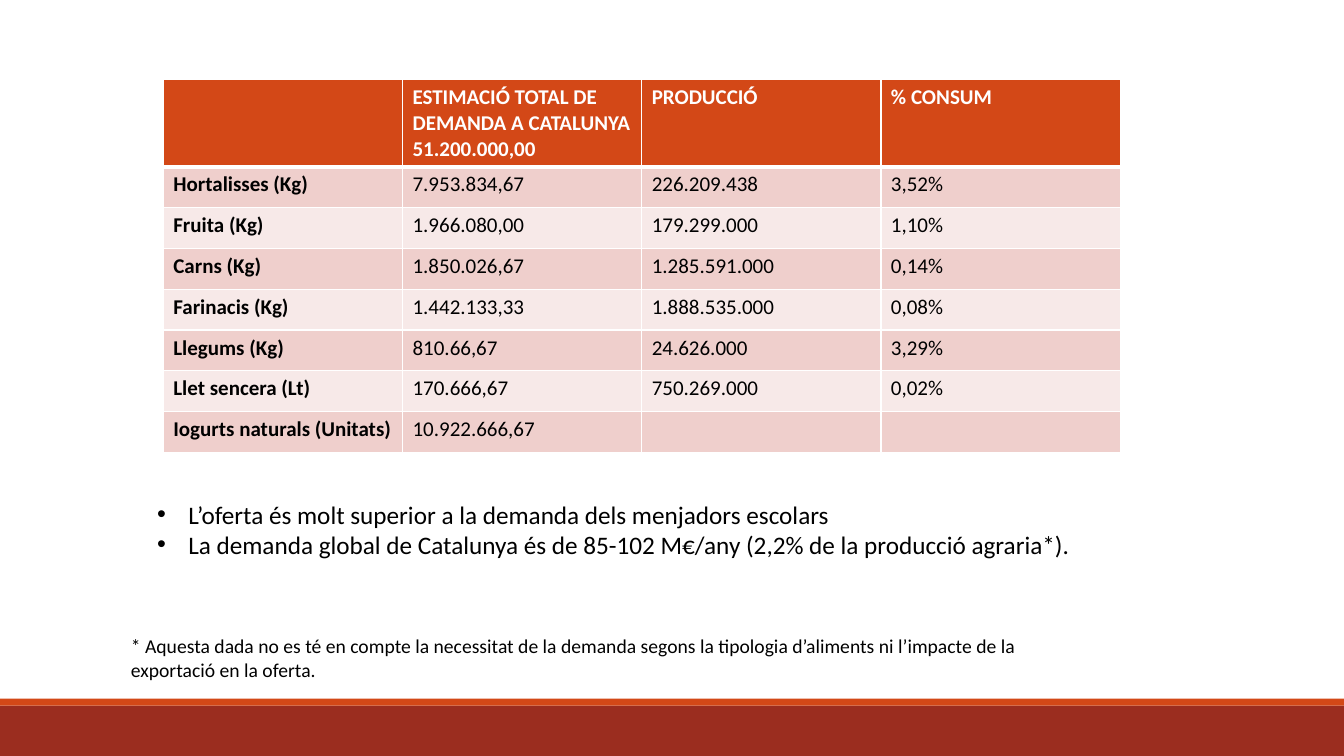
"""Build the slide comparing school-canteen food demand with Catalan production."""

from dataclasses import dataclass

from lxml.etree import SubElement as Sub
from pptx import Presentation
from pptx.dml.color import RGBColor as Rgb
from pptx.enum.shapes import MSO_SHAPE as Form
from pptx.oxml.ns import qn
from pptx.util import Inches, Pt

WIDE, HIGH = Inches(13.33), Inches(7.5)


@dataclass(frozen=True)
class Theme:
    font: str = "Calibri"
    white: str = "FFFFFF"
    ink: str = "000000"
    brick: str = "9B2D1F"
    flame: str = "D34817"
    rows: tuple[str, str] = ("EFCFCC", "F7E9E8")
    cell: int = 15
    body: int = 18
    note: int = 14


@dataclass(frozen=True)
class Box:
    """Place on the slide, in percent of its width and height."""
    x: float
    y: float
    w: float
    h: float

    def frame(self) -> tuple[int, int, int, int]:
        return (int(WIDE * self.x / 100), int(HIGH * self.y / 100),
                int(WIDE * self.w / 100), int(HIGH * self.h / 100))


@dataclass(frozen=True)
class Band:
    box: Box
    fill: str


@dataclass(frozen=True)
class Note:
    box: Box
    lines: tuple[str, ...]
    size: int
    mark: str = ""


LOOK = Theme()
BANDS = (
    Band(Box(0, 93.33, 100, 6.67), LOOK.brick),
    Band(Box(0, 92.4, 100, 0.93), LOOK.flame),
)
GRID = Box(12.15, 10.53, 71.2, 49.2)
HEAD = 11.4
DATA = (
    ("", "ESTIMACIÓ TOTAL DE DEMANDA A CATALUNYA\n51.200.000,00", "PRODUCCIÓ", "% CONSUM"),
    ("Hortalisses (Kg)", "7.953.834,67", "226.209.438", "3,52%"),
    ("Fruita (Kg)", "1.966.080,00", "179.299.000", "1,10%"),
    ("Carns (Kg)", "1.850.026,67", "1.285.591.000", "0,14%"),
    ("Farinacis (Kg)", "1.442.133,33", "1.888.535.000", "0,08%"),
    ("Llegums (Kg)", "810.66,67", "24.626.000", "3,29%"),
    ("Llet sencera (Lt)", "170.666,67", "750.269.000", "0,02%"),
    ("Iogurts naturals (Unitats)", "10.922.666,67", "", ""),
)
NOTES = (
    Note(Box(10.95, 65.33, 72.4, 9.47), (
        "L’oferta és molt superior a la demanda dels menjadors escolars",
        "La demanda global de Catalunya és de 85-102 M€/any (2,2% de la producció agraria*).",
    ), LOOK.body, "•"),
    Note(Box(9, 83.2, 72.4, 7.6), (
        "* Aquesta dada no es té en compte la necessitat de la demanda segons la tipologia "
        "d’aliments ni l’impacte de la exportació en la oferta.",
    ), LOOK.note),
)


def style(para, size: int, tint: str, bold: bool = False) -> None:
    font = para.font
    font.name, font.size, font.bold = LOOK.font, Pt(size), bold
    font.color.rgb = Rgb.from_string(tint)


def bullet(para, mark: str) -> None:
    props = para._p.get_or_add_pPr()
    gap = Inches(0.31)
    props.set("marL", str(gap))
    props.set("indent", str(-gap))
    Sub(props, qn("a:buFont"), typeface="Arial")
    Sub(props, qn("a:buChar"), char=mark)


def edge(cell, base: int) -> None:
    props = cell._tc.get_or_add_tcPr()
    for side, width in (("L", 1), ("R", 1), ("T", 1), ("B", base)):
        line = Sub(props, qn(f"a:ln{side}"), w=str(Pt(width)))
        Sub(Sub(line, qn("a:solidFill")), qn("a:srgbClr"), val=LOOK.white)


def draw_band(slide, band: Band) -> None:
    shape = slide.shapes.add_shape(Form.RECTANGLE, *band.box.frame())
    shape.shadow.inherit = False
    shape.fill.solid()
    shape.fill.fore_color.rgb = Rgb.from_string(band.fill)
    shape.line.fill.background()


def draw_grid(slide) -> None:
    table = slide.shapes.add_table(len(DATA), len(DATA[0]), *GRID.frame()).table
    step = (GRID.h - HEAD) / (len(DATA) - 1)
    for row, texts in enumerate(DATA):
        head = row == 0
        table.rows[row].height = int(HIGH * (HEAD if head else step) / 100)
        for col, text in enumerate(texts):
            cell = table.cell(row, col)
            edge(cell, 3 if head else 1)
            cell.fill.solid()
            fill = LOOK.flame if head else LOOK.rows[(row - 1) % 2]
            cell.fill.fore_color.rgb = Rgb.from_string(fill)
            cell.text = text
            for para in cell.text_frame.paragraphs:
                style(para, LOOK.cell, LOOK.white if head else LOOK.ink, head or col == 0)


def draw_note(slide, note: Note) -> None:
    frame = slide.shapes.add_textbox(*note.box.frame()).text_frame
    frame.word_wrap = True
    frame.text = "\n".join(note.lines)
    for para in frame.paragraphs:
        if note.mark:
            bullet(para, note.mark)
        style(para, note.size, LOOK.ink)


def main() -> None:
    deck = Presentation()
    deck.slide_width, deck.slide_height = WIDE, HIGH
    slide = deck.slides.add_slide(deck.slide_layouts[6])
    for band in BANDS:
        draw_band(slide, band)
    draw_grid(slide)
    for note in NOTES:
        draw_note(slide, note)
    deck.save("out.pptx")


if __name__ == "__main__":
    main()
